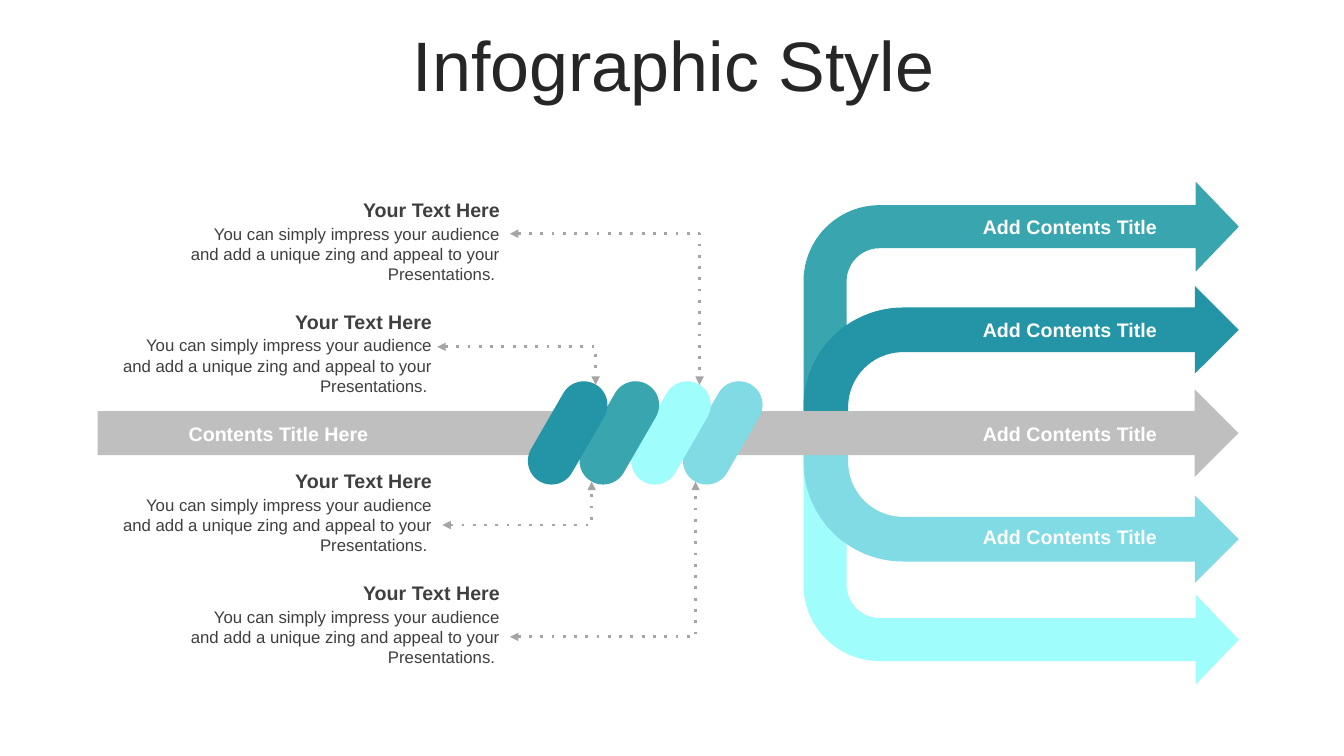
from dataclasses import dataclass

from lxml.etree import SubElement
from pptx import Presentation
from pptx.dml.color import RGBColor
from pptx.enum.dml import MSO_LINE
from pptx.enum.shapes import MSO_CONNECTOR, MSO_SHAPE
from pptx.enum.text import MSO_ANCHOR, MSO_AUTO_SIZE, PP_ALIGN
from pptx.oxml.ns import qn
from pptx.util import Cm, Pt


@dataclass(frozen=True)
class Theme:
    font: str = "Arial"
    title_size: int = 50
    heading_size: int = 14
    body_size: int = 12
    line_width: int = 2
    title: str = "262626"
    text: str = "3F3F3F"
    label: str = "FFFFFF"
    trunk: str = "BFBFBF"
    connector: str = "A5A5A5"
    medium: str = "39A5AE"
    dark: str = "2395A6"
    light: str = "80DBE4"
    pale: str = "9FFDFB"


THEME = Theme()
OUTER_BEND = (0.185, 0.193, 0.185, 0.327)
INNER_BEND = (0.343, 0.336, 0.337, 0.765)
CALLOUT_BODY = (
    "You can simply impress your audience and add a unique zing "
    "and appeal to your Presentations. "
)


def centimetres(box):
    return [Cm(length) for length in box]


def add_text(shapes, box, text, size, color, bold=False, align=PP_ALIGN.CENTER):
    shape = shapes.add_textbox(*centimetres(box))
    frame = shape.text_frame
    frame.word_wrap = True
    frame.auto_size = MSO_AUTO_SIZE.SHAPE_TO_FIT_TEXT
    paragraph = frame.paragraphs[0]
    paragraph.text = text
    paragraph.alignment = align
    paragraph.font.name = THEME.font
    paragraph.font.size = Pt(size)
    paragraph.font.bold = bold
    paragraph.font.color.rgb = RGBColor.from_string(color)
    return frame


def add_filled(shapes, kind, box, color, adjustments):
    shape = shapes.add_shape(kind, *centimetres(box))
    shape.shadow.inherit = False
    shape.fill.solid()
    shape.fill.fore_color.rgb = RGBColor.from_string(color)
    shape.line.fill.background()
    for index, value in enumerate(adjustments):
        shape.adjustments[index] = value
    return shape


def add_title(slide, box):
    frame = add_text(slide.shapes, box, "Infographic Style", THEME.title_size, THEME.title)
    frame.auto_size = MSO_AUTO_SIZE.NONE
    frame.vertical_anchor = MSO_ANCHOR.MIDDLE
    frame.paragraphs[0].line_spacing = 0.8


def add_branches(slide, box):
    left, top, width, height = box
    for branch_height, bend, upper_inset, lower_inset, upper, lower in (
        (5.87, OUTER_BEND, 0, 0, THEME.medium, THEME.pale),
        (3.28, INNER_BEND, 2.63, 2.56, THEME.dark, THEME.light),
    ):
        branch = (left, top + upper_inset, width, branch_height)
        add_filled(slide.shapes, MSO_SHAPE.BENT_ARROW, branch, upper, bend)
        branch = (left, top + height - lower_inset - branch_height, width, branch_height)
        mirrored = add_filled(slide.shapes, MSO_SHAPE.BENT_ARROW, branch, lower, bend)
        mirrored._element.spPr.xfrm.set("flipV", "1")


def add_trunk(slide, box):
    left, top, width, height = box
    add_filled(slide.shapes, MSO_SHAPE.RIGHT_ARROW, box, THEME.trunk, (0.5, 0.5))
    add_text(
        slide.shapes, (left + 0.7, top + 0.69, 7.72, 0.86), "Contents Title Here",
        THEME.heading_size, THEME.label, bold=True,
    )


def add_branch_labels(slide, box):
    left, top, width, height = box
    count = 4
    label_height = 0.86
    step = (height - label_height) / (count - 1)
    for index in range(count):
        add_text(
            slide.shapes, (left, top + index * step, width, label_height),
            "Add Contents Title", THEME.heading_size, THEME.label, bold=True,
        )


def add_capsules(slide, box):
    left, top, width, height = box
    colors = (THEME.dark, THEME.medium, THEME.pale, THEME.light)
    capsule_width = 1.19
    step = (width - capsule_width) / (len(colors) - 1)
    group = slide.shapes.add_group_shape()
    for index, color in reversed(list(enumerate(colors))):
        capsule = add_filled(
            group.shapes, MSO_SHAPE.ROUNDED_RECTANGLE,
            (left + index * step, top, capsule_width, height), color, (0.5,),
        )
        capsule.rotation = 30


def add_callout(slide, box):
    left, top, width, height = box
    group = slide.shapes.add_group_shape()
    add_text(
        group.shapes, (left, top + 0.64, width, height - 0.64), CALLOUT_BODY,
        THEME.body_size, THEME.text, align=PP_ALIGN.RIGHT,
    )
    add_text(
        group.shapes, (left, top, width, 0.86), "Your Text Here",
        THEME.heading_size, THEME.text, bold=True, align=PP_ALIGN.RIGHT,
    )


def add_dotted_elbow(slide, start, end):
    connector = slide.shapes.add_connector(
        MSO_CONNECTOR.ELBOW, *centimetres(start), *centimetres(end)
    )
    connector.line.width = Pt(THEME.line_width)
    connector.line.color.rgb = RGBColor.from_string(THEME.connector)
    connector.line.dash_style = MSO_LINE.ROUND_DOT
    properties = connector._element.spPr
    properties.find(qn("a:prstGeom")).set("prst", "bentConnector2")
    line = properties.find(qn("a:ln"))
    line.find(qn("a:prstDash")).set("val", "dot")
    for end_name in ("a:headEnd", "a:tailEnd"):
        SubElement(line, qn(end_name), type="triangle")
    SubElement(properties, qn("a:effectLst"))


def add_callouts(slide, box):
    left, top, width, height = box
    callout_width, callout_height = 8.48, 2.44
    callouts = (
        (1.71, 0, (12.85, 5.89), (17.63, 9.7)),
        (0, 2.81, (11.02, 8.74), (15.01, 9.7)),
        (0, 6.83, (11.15, 13.23), (14.91, 12.14)),
        (1.71, height - callout_height, (12.85, 16.05), (17.53, 12.14)),
    )
    for indent, offset, start, end in callouts:
        add_callout(slide, (left + indent, top + offset, callout_width, callout_height))
        add_dotted_elbow(slide, start, end)


def main():
    presentation = Presentation()
    presentation.slide_width = Cm(33.87)
    presentation.slide_height = Cm(19.05)
    slide = presentation.slides.add_slide(presentation.slide_layouts[6])
    add_title(slide, (0.9, 0.79, 32.16, 2.01))
    add_branches(slide, (20.25, 4.58, 10.97, 12.67))
    add_trunk(slide, (2.46, 9.81, 28.75, 2.21))
    add_branch_labels(slide, (23.89, 5.28, 6.15, 8.69))
    add_capsules(slide, (13.71, 9.5, 5.1, 2.82))
    add_callouts(slide, (2.66, 4.87, 10.19, 12.09))
    presentation.save("out.pptx")


if __name__ == "__main__":
    main()
